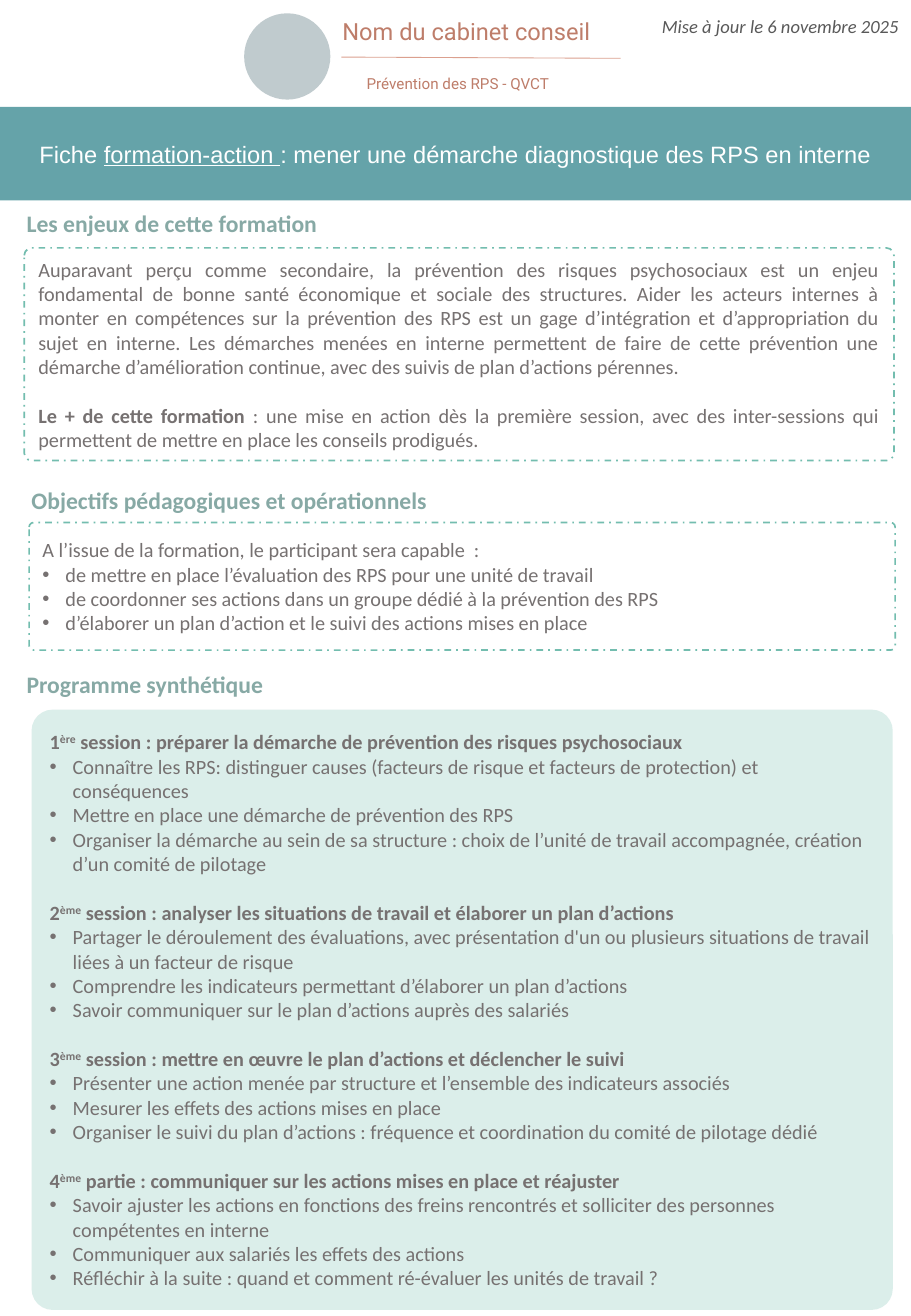
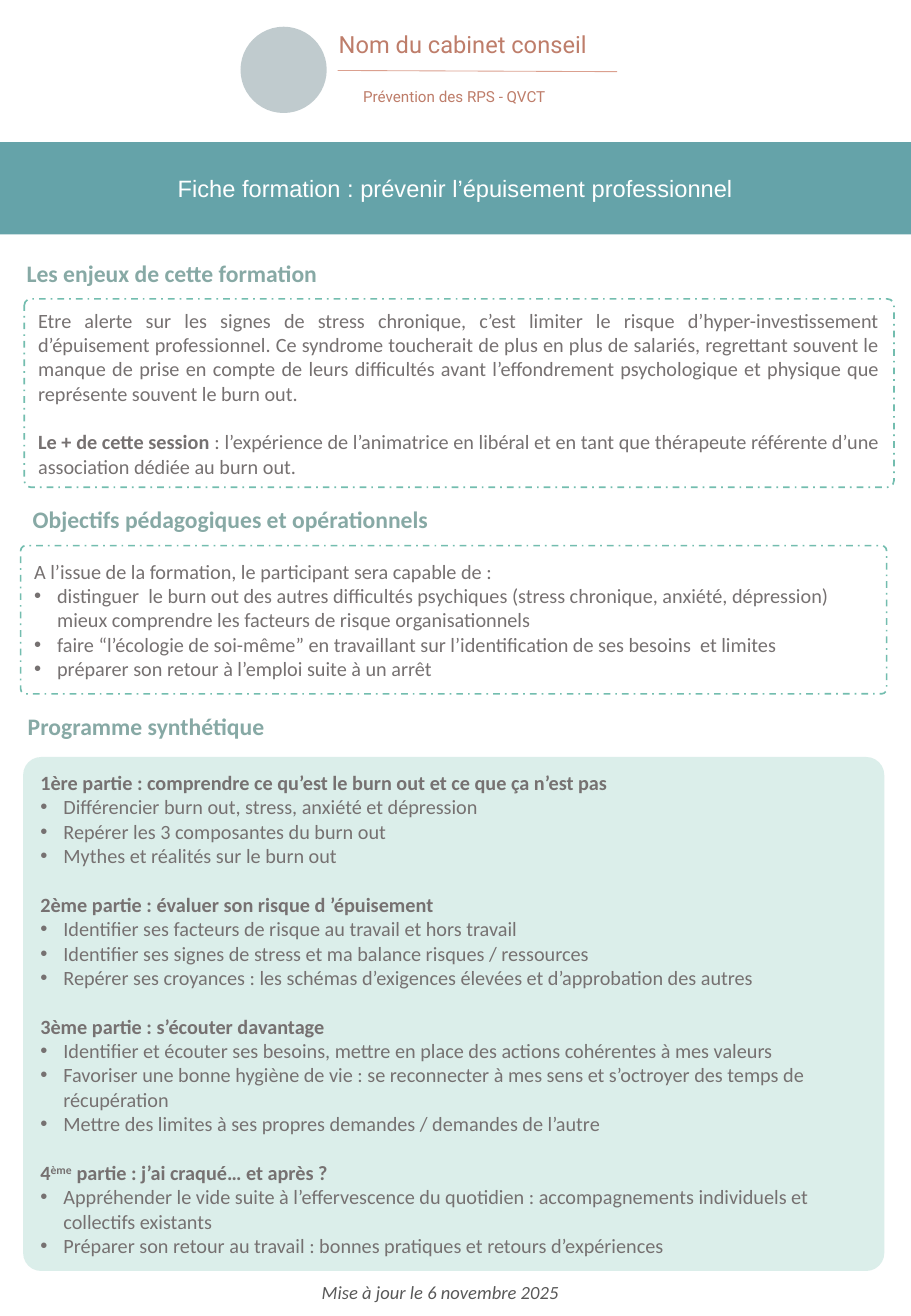
"""Build two training sheets that share a brand header, title band and panels."""
from dataclasses import dataclass
from typing import Optional

from lxml import etree
from pptx import Presentation
from pptx import util as u
from pptx.dml.color import RGBColor
from pptx.enum import dml, shapes, text
from pptx.oxml.ns import qn

PX = 9144
WIDE, HIGH = 750, 1083
LEFT, MID, RIGHT, FULL = (text.PP_ALIGN.LEFT, text.PP_ALIGN.CENTER,
                          text.PP_ALIGN.RIGHT, text.PP_ALIGN.JUSTIFY)


@dataclass(frozen=True)
class Style:
    size: float
    font: str
    color: str
    bold: bool = False
    slant: bool = False


@dataclass(frozen=True)
class Theme:
    band: str = "65A3A9"
    mint: str = "73BDAF"
    slate: str = "637D85"
    rule: str = "DBA08F"
    title: Style = Style(14, "Arial", "FFFFFF")
    head: Style = Style(14, "Calibri", "87A9A5", bold=True)
    body: Style = Style(12, "Calibri", "767171")
    name: Style = Style(14, "Roboto", "BE7D6A")
    motto: Style = Style(9, "Roboto", "BE7D6A")
    date: Style = Style(11, "Calibri", "595959", slant=True)
    gap: float = 14.6
    dent: int = 19


@dataclass(frozen=True)
class Run:
    text: str
    bold: bool = False
    under: bool = False
    sup: bool = False


@dataclass(frozen=True)
class Para:
    runs: tuple[Run, ...]
    align: text.PP_ALIGN = LEFT
    bullet: bool = False
    gap: bool = False


@dataclass(frozen=True)
class Box:
    x: int
    y: int
    w: int
    h: int

    def emu(self) -> tuple[int, ...]:
        return tuple(n * PX for n in (self.x, self.y, self.w, self.h))


@dataclass(frozen=True)
class Panel:
    label: str
    spot: tuple[int, int]
    box: Box
    paras: list[Para]
    solid: bool = False


@dataclass(frozen=True)
class Sheet:
    title: tuple[Run, ...]
    band: Box
    brand: tuple[int, int]
    date: Box
    panels: list[Panel]


T = Theme()


def plain(line: str, align: text.PP_ALIGN = LEFT) -> Para:
    return Para((Run(line),), align)


def points(*lines: str) -> list[Para]:
    return [Para((Run(line),), bullet=True) for line in lines]


def part(num: str, rank: str, topic: str, *lines: str, sup: bool = True) -> list[Para]:
    runs = (Run(num, True), Run(rank, True, sup=sup), Run(topic, True))
    return [Para(runs, gap=num != "1"), *points(*lines)]


def stakes(intro: str, label: str, plus: str) -> list[Para]:
    return [plain(intro, FULL),
            Para((Run(label, True), Run(plus)), FULL, gap=True)]


def write(frame, paras: list[Para], style: Style) -> None:
    frame.word_wrap = True
    for i, para in enumerate(paras):
        p = frame.paragraphs[0] if i == 0 else frame.add_paragraph()
        p.alignment = para.align
        if para.gap:
            p.space_before = u.Pt(T.gap)
        if para.bullet:
            props = p._p.get_or_add_pPr()
            props.set("marL", str(T.dent * PX))
            props.set("indent", str(-T.dent * PX))
            etree.SubElement(props, qn("a:buFont")).set("typeface", "Arial")
            etree.SubElement(props, qn("a:buChar")).set("char", "•")
        for part_run in para.runs:
            run = p.add_run()
            run.text = part_run.text
            font = run.font
            font.size, font.name = u.Pt(style.size), style.font
            font.color.rgb = RGBColor.from_string(style.color)
            font.bold = style.bold or part_run.bold
            font.italic = style.slant
            font.underline = part_run.under
            if part_run.sup:
                run._r.get_or_add_rPr().set("baseline", "30000")


def label(group, box: Box, line: str, style: Style, align: text.PP_ALIGN = LEFT):
    frame = group.add_textbox(*box.emu()).text_frame
    write(frame, [plain(line, align)], style)
    return frame.paragraphs[0]


def paint(shape, color: str, alpha: int = 100) -> None:
    shape.fill.solid()
    shape.fill.fore_color.rgb = RGBColor.from_string(color)
    if alpha < 100:
        tone = shape._element.spPr.find(f"{qn('a:solidFill')}/{qn('a:srgbClr')}")
        etree.SubElement(tone, qn("a:alpha")).set("val", str(alpha * 1000))


def brand(slide, x: int, y: int) -> None:
    group = slide.shapes.add_group_shape().shapes
    disc = group.add_shape(shapes.MSO_SHAPE.OVAL, *Box(x, y + 4, 71, 71).emu())
    disc.shadow.inherit = False
    disc.line.fill.background()
    paint(disc, T.slate, 40)
    for box, line, style in (
            (Box(x + 71, y, 259, 61), "Nom du cabinet conseil", T.name),
            (Box(x + 91, y + 48, 219, 48), "Prévention des RPS - QVCT", T.motto)):
        p = label(group, box, line, style)
        p.line_spacing, p.space_after = 1.07, u.Pt(8)
    ends = (x + 80, y + 40, x + 310, y + 41)
    rule = group.add_connector(shapes.MSO_CONNECTOR.STRAIGHT, *(n * PX for n in ends))
    rule.line.color.rgb = RGBColor.from_string(T.rule)
    rule.line.width = u.Pt(0.5)
    etree.SubElement(rule._element.spPr, qn("a:effectLst"))


def panel(slide, item: Panel) -> None:
    label(slide.shapes, Box(*item.spot, 709, 34), item.label, T.head)
    shape = slide.shapes.add_shape(shapes.MSO_SHAPE.ROUNDED_RECTANGLE, *item.box.emu())
    shape.adjustments[0] = 0.035
    shape.shadow.inherit = False
    if item.solid:
        paint(shape, T.mint, 25)
        shape.line.fill.background()
    else:
        shape.fill.background()
        shape.line.color.rgb = RGBColor.from_string(T.mint)
        shape.line.width = u.Pt(1)
        shape.line.dash_style = dml.MSO_LINE.DASH_DOT
    shape.text_frame.vertical_anchor = text.MSO_ANCHOR.MIDDLE
    write(shape.text_frame, item.paras, T.body)


def draw(deck, sheet: Sheet) -> None:
    slide = deck.slides.add_slide(deck.slide_layouts[5])
    title = slide.shapes.title
    title.left, title.top, title.width, title.height = sheet.band.emu()
    paint(title, T.band)
    title.text_frame.auto_size = text.MSO_AUTO_SIZE.NONE
    title.text_frame.vertical_anchor = text.MSO_ANCHOR.MIDDLE
    write(title.text_frame, [Para(sheet.title, MID)], T.title)
    for item in sheet.panels:
        panel(slide, item)
    brand(slide, *sheet.brand)
    label(slide.shapes, sheet.date, "Mise à jour le 6 novembre 2025", T.date, RIGHT)


STAKES = "Les enjeux de cette formation"
GOALS = "Objectifs pédagogiques et opérationnels"
PLAN = "Programme synthétique"

SHEETS = [
    Sheet(
        (Run("Fiche "), Run("formation-action ", under=True),
         Run(": mener une démarche diagnostique des RPS en interne")),
        Box(0, 88, WIDE, 77), (201, 7), Box(478, 7, 272, 29),
        [
            Panel(STAKES, (12, 167), Box(20, 204, 716, 175), stakes(
                "Auparavant perçu comme secondaire, la prévention des risques psychosociaux est un enjeu "
                "fondamental de bonne santé économique et sociale des structures. Aider les acteurs internes à "
                "monter en compétences sur la prévention des RPS est un gage d’intégration et d’appropriation du "
                "sujet en interne. Les démarches menées en interne permettent de faire de cette prévention une "
                "démarche d’amélioration continue, avec des suivis de plan d’actions pérennes.",
                "Le + de cette formation ",
                ": une mise en action dès la première session, avec des inter-sessions qui "
                "permettent de mettre en place les conseils prodigués.")),
            Panel(GOALS, (16, 395), Box(24, 430, 713, 105), [
                plain("A l’issue de la formation, le participant sera capable  :"),
                *points("de mettre en place l’évaluation des RPS pour une unité de travail",
                        "de coordonner ses actions dans un groupe dédié à la prévention des RPS",
                        "d’élaborer un plan d’action et le suivi des actions mises en place")]),
            Panel(PLAN, (12, 546), Box(26, 584, 709, 494), [
                *part("1", "ère", " session : préparer la démarche de prévention des risques psychosociaux",
                      "Connaître les RPS: distinguer causes (facteurs de risque et facteurs de protection) "
                      "et conséquences",
                      "Mettre en place une démarche de prévention des RPS",
                      "Organiser la démarche au sein de sa structure : choix de l’unité de travail "
                      "accompagnée, création d’un comité de pilotage"),
                *part("2", "ème", " session : analyser les situations de travail et élaborer un plan d’actions",
                      "Partager le déroulement des évaluations, avec présentation d'un ou plusieurs "
                      "situations de travail liées à un facteur de risque",
                      "Comprendre les indicateurs permettant d’élaborer un plan d’actions",
                      "Savoir communiquer sur le plan d’actions auprès des salariés"),
                *part("3", "ème", " session : mettre en œuvre le plan d’actions et déclencher le suivi",
                      "Présenter une action menée par structure et l’ensemble des indicateurs associés",
                      "Mesurer les effets des actions mises en place",
                      "Organiser le suivi du plan d’actions : fréquence et coordination du comité de "
                      "pilotage dédié"),
                *part("4", "ème", " partie : communiquer sur les actions mises en place et réajuster",
                      "Savoir ajuster les actions en fonctions des freins rencontrés et solliciter des "
                      "personnes compétentes en interne",
                      "Communiquer aux salariés les effets des actions",
                      "Réfléchir à la suite : quand et comment ré-évaluer les unités de travail ?"),
            ], solid=True),
        ]),
    Sheet(
        (Run("Fiche formation : prévenir l’épuisement professionnel"),),
        Box(0, 117, WIDE, 76), (198, 18), Box(198, 1049, 272, 29),
        [
            Panel(STAKES, (12, 208), Box(20, 246, 716, 155), stakes(
                "Etre alerte sur les signes de stress chronique, c’est limiter le risque d’hyper-investissement "
                "d’épuisement professionnel. Ce syndrome toucherait de plus en plus de salariés, regrettant "
                "souvent le manque de prise en compte de leurs difficultés avant l’effondrement psychologique "
                "et physique que représente souvent le burn out.",
                "Le + de cette session ",
                ": l’expérience de l’animatrice en libéral et en tant que thérapeute référente d’une "
                "association dédiée au burn out.")),
            Panel(GOALS, (17, 411), Box(17, 449, 713, 122), [
                plain("A l’issue de la formation, le participant sera capable de :"),
                *points("distinguer  le burn out des autres difficultés psychiques (stress chronique, anxiété, "
                        "dépression) mieux comprendre les facteurs de risque organisationnels",
                        "faire “l’écologie de soi-même” en travaillant sur l’identification de ses "
                        "besoins  et limites",
                        "préparer son retour à l’emploi suite à un arrêt")]),
            Panel(PLAN, (13, 581), Box(19, 623, 709, 423), [
                *part("1", "ère", " partie : comprendre ce qu’est le burn out et ce que ça n’est pas",
                      "Différencier burn out, stress, anxiété et dépression",
                      "Repérer les 3 composantes du burn out",
                      "Mythes et réalités sur le burn out", sup=False),
                *part("2", "ème", " partie : évaluer son risque d ’épuisement",
                      "Identifier ses facteurs de risque au travail et hors travail",
                      "Identifier ses signes de stress et ma balance risques / ressources",
                      "Repérer ses croyances : les schémas d’exigences élevées et d’approbation des autres",
                      sup=False),
                *part("3", "ème", " partie : s’écouter davantage",
                      "Identifier et écouter ses besoins, mettre en place des actions cohérentes à mes valeurs",
                      "Favoriser une bonne hygiène de vie : se reconnecter à mes sens et s’octroyer des "
                      "temps de récupération",
                      "Mettre des limites à ses propres demandes / demandes de l’autre", sup=False),
                *part("4", "ème", " partie : j’ai craqué… et après ?",
                      "Appréhender le vide suite à l’effervescence du quotidien : accompagnements "
                      "individuels et collectifs existants",
                      "Préparer son retour au travail : bonnes pratiques et retours d’expériences"),
            ], solid=True),
        ]),
]


def main() -> None:
    deck = Presentation()
    deck.slide_width, deck.slide_height = WIDE * PX, HIGH * PX
    for sheet in SHEETS:
        draw(deck, sheet)
    deck.save("out.pptx")


if __name__ == "__main__":
    main()
